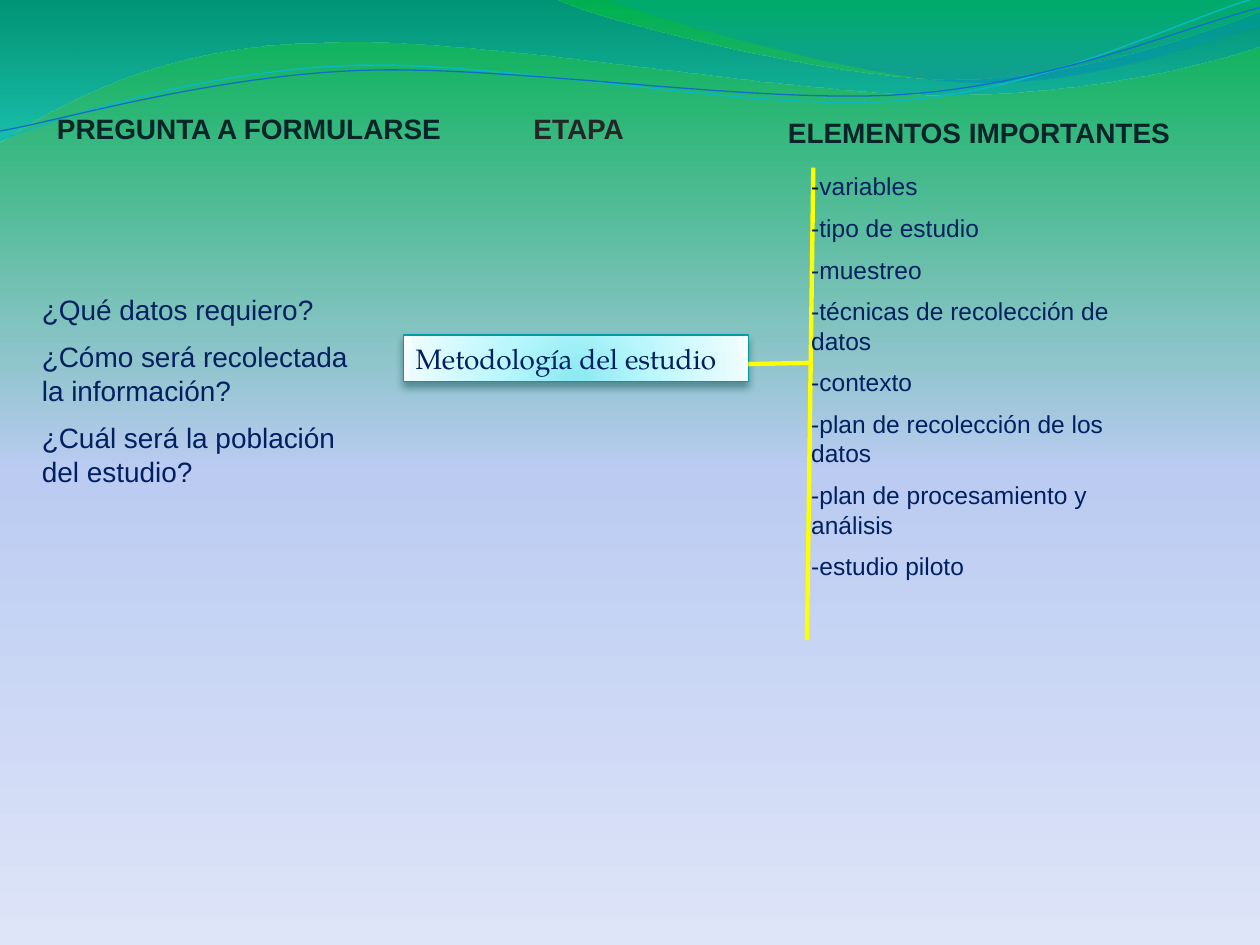
import math

from lxml import etree
from pptx import Presentation, util as u
from pptx.dml.color import RGBColor
from pptx.enum import shapes, text
from pptx.oxml import parse_xml
from pptx.oxml.ns import nsdecls, qn

COLS, ROWS = 100, 75          # slide grid
CELL = u.Inches(0.1)
NAVY, TEAL, YELLOW = "002060", "072428", "FFFF00"
DOWN = '<a:lin ang="5400000" scaled="0"/>'


def rgb(value):
    return RGBColor.from_string(value)


def grid(*cells):
    return [u.Emu(round(c * CELL)) for c in cells]


def set_gradient(fill, root, stops, direction):
    """Apply (position %, colour, opacity %) stops to the gradient under root."""
    fill.gradient()
    old = next(root.iter(qn("a:gradFill")))
    gs = "".join(
        f'<a:gs pos="{pos * 1000}"><a:srgbClr val="{color}">'
        f'<a:alpha val="{alpha * 1000}"/></a:srgbClr></a:gs>'
        for pos, color, alpha in stops)
    new = parse_xml(f'<a:gradFill {nsdecls("a")} rotWithShape="1">'
                    f'<a:gsLst>{gs}</a:gsLst>{direction}</a:gradFill>')
    old.getparent().replace(old, new)


def add_outline(parent, start, segments, closed):
    """Segments hold one point for a line or many, in threes, for curves."""
    builder = parent.shapes.build_freeform(*grid(*start), scale=1.0)
    builder.add_line_segments([tuple(grid(*pt)) for seg in segments for pt in seg],
                              close=closed)
    sp = builder.convert_to_shape()
    sp.shadow.inherit = False
    lines = iter(list(sp._element.iter(qn("a:lnTo"))))
    for seg in segments:
        nodes = [next(lines) for _ in seg]
        if len(seg) == 1:
            continue
        for i in range(0, len(nodes), 3):
            bezier = etree.Element(qn("a:cubicBezTo"))
            nodes[i].addprevious(bezier)
            for node in nodes[i:i + 3]:
                bezier.append(node[0])
                node.getparent().remove(node)
    return sp


def add_bands(s):
    """Translucent bands across the top."""
    upper = [(47.6, 1.7), (66.4, 6.3), (75.8, 6.3),
             (85.3, 6.3), (95.8, 2.6), (100, 0.9)]
    lower = [(98.3, 4.4), (87, 7.6), (74.6, 7.5),
             (62.2, 7.5), (38.2, 2.8), (25.7, 3.4),
             (12.9, 3.5), (4.6, 8.3), (-0.1, 11.3)]
    corner = [(50.9, 1.1), (68.2, 6.2), (76.9, 6.5),
              (85.6, 6.9), (96.1, 3.2), (100, 2.1)]
    bands = [
        ((0, -0.1), [[(44, -0.1)], upper, [(100.1, 3.6)], lower],
         [(0, "0074A1", 45), (100, "00C6CF", 55)]),
        ((47.9, -0.1), [corner, [(100, 0)]],
         [(0, "00A1A9", 30), (80, "008BBF", 45)]),
    ]
    for start, segments, stops in bands:
        sp = add_outline(s, start, segments, True)
        set_gradient(sp.fill, sp._element.spPr, stops, DOWN)
        sp.line.fill.background()


def turn(point, center, degrees):
    a = math.radians(degrees)
    x, y = point[0] - center[0], point[1] - center[1]
    return (center[0] + x * math.cos(a) - y * math.sin(a),
            center[1] + x * math.sin(a) + y * math.cos(a))


def add_strands(s):
    """Two thin tilted curves, grouped."""
    tilt = 2.7
    strands = [
        ([(0, 11.1), (4.8, 9.3), (15.8, 5.7), (27.7, 5.2), (39.5, 4.7),
          (59.3, 8.9), (71.3, 8), (83.3, 7.1), (93.8, 1.5), (99.8, -0.2)],
         (49.9, 5.75), "0AB8BF", 0.85),
        ([(0, 10.4), (4.7, 9.6), (16.4, 6.1), (28.3, 5.6), (40.3, 5.1),
          (59.7, 8.3), (71.7, 7.5), (83.6, 6.7), (94.1, 2.1), (100, 0.6)],
         (49.95, 5.9), "0F6FC6", 0.75),
    ]
    group = s.shapes.add_group_shape()
    for points, center, color, width in strands:
        start, *rest = [turn(pt, center, tilt) for pt in points]
        sp = add_outline(group, start, [rest], False)
        sp.rotation = 360 - tilt
        sp.fill.background()
        sp.line.color.rgb = rgb(color)
        sp.line.width = u.Pt(width)


def write(sp, lines, size, color, font="Arial", bold=False):
    tf = sp.text_frame
    tf.word_wrap = True
    tf.auto_size = text.MSO_AUTO_SIZE.SHAPE_TO_FIT_TEXT
    tf.vertical_anchor = text.MSO_ANCHOR.TOP
    for i, line in enumerate(lines):
        p = tf.paragraphs[0] if i == 0 else tf.add_paragraph()
        p.alignment = text.PP_ALIGN.LEFT
        p.space_before = u.Pt(size * 0.5 if i else 0)
        for part in (line if isinstance(line, tuple) else (line,)):
            r = p.add_run()
            r.text = part
            r.font.size, r.font.name, r.font.bold = u.Pt(size), font, bold
            r.font.color.rgb = rgb(color)
    return tf


def add_text(s, box, lines, size, color, bold=False):
    return write(s.shapes.add_textbox(*grid(*box)), lines, size, color, bold=bold)


def add_line(s, start, end):
    line = s.shapes.add_connector(shapes.MSO_CONNECTOR.STRAIGHT,
                                  *grid(*start, *end))
    line.line.color.rgb = rgb(YELLOW)
    line.line.width = u.Pt(2.5)
    etree.SubElement(line._element.spPr, qn("a:effectLst"))


def add_headings(s, box):
    x, y, w, h = box
    # offset, width, height, left and top margins, label, colour
    headings = [(0, 37, h, 1, 0.5, "PREGUNTA A FORMULARSE", TEAL),
                (32.3, 18.1, h, 6.5, 0.5, "ETAPA", "262626"),
                (55.9, w - 55.9, h + 0.3, 3.1, 0.8, "ELEMENTOS IMPORTANTES", TEAL)]
    for dx, width, height, left, top, label, color in headings:
        tf = add_text(s, (x + dx, y, width, height), [label], 16, color, bold=True)
        tf.margin_left, tf.margin_top = grid(left, top)


def add_questions(s, box):
    add_text(s, box, ["¿Qué datos requiero?",
                      "¿Cómo será recolectada la información?",
                      "¿Cuál será la población del estudio?"], 16, NAVY)


def add_stage(s, box):
    """Glowing box with a soft shadow, and its link to the elements."""
    x, y, w, h = box
    sp = s.shapes.add_shape(shapes.MSO_SHAPE.RECTANGLE, *grid(*box))
    stops = [(0, "8BE9F1", 100), (43, "B9F7FD", 100),
             (93, "EAFCFE", 100), (100, "F8FEFF", 100)]
    set_gradient(sp.fill, sp._element.spPr, stops,
                 '<a:path path="circle"><a:fillToRect l="50000" t="130000" '
                 'r="50000" b="-30000"/></a:path>')
    sp.line.color.rgb = rgb("069CA3")
    sp.line.width = u.Pt(0.75)
    sp._element.spPr.append(parse_xml(
        f'<a:effectLst {nsdecls("a")}><a:outerShdw blurRad="{u.Pt(4.5)}" '
        f'dist="{u.Pt(3)}" dir="5400000" rotWithShape="0"><a:srgbClr val="024B4E">'
        '<a:alpha val="48000"/></a:srgbClr></a:outerShdw></a:effectLst>'))
    write(sp, ["Metodología del estudio"], 16, NAVY, font="TeX Gyre Pagella")
    add_line(s, (x + w, y + 2.3), (x + w + 4.8, y + 2.2))


def add_elements(s, box):
    x, y, w, h = box
    add_line(s, (x + 1.15, y + 0.2), (x + 0.65, y + 37.7))
    tf = add_text(s, box, [("-", "variables"), "-tipo de estudio", "-muestreo",
                           "-técnicas de recolección de datos", "-contexto",
                           "-plan de recolección de los datos",
                           "-plan de procesamiento y análisis",
                           "-estudio piloto"], 14, NAVY)
    tf.paragraphs[0].runs[0].font.color.rgb = rgb("0D0D0D")


def main():
    prs = Presentation()
    prs.slide_width, prs.slide_height = grid(COLS, ROWS)
    s = prs.slides.add_slide(prs.slide_layouts[6])
    set_gradient(s.background.fill, s._element,
                 [(0, "00B050", 100), (50, "BBCBF2", 100), (100, "DEE5F8", 100)],
                 DOWN)
    add_bands(s)
    add_strands(s)
    add_questions(s, (2.34, 22.7, 28, 17.2))
    add_headings(s, (3.54, 8.4, 96.5, 3.7))
    add_stage(s, (32, 26.6, 27.4, 3.7))
    add_elements(s, (63.4, 13.1, 27.6, 35.2))
    prs.save("out.pptx")


if __name__ == "__main__":
    main()
